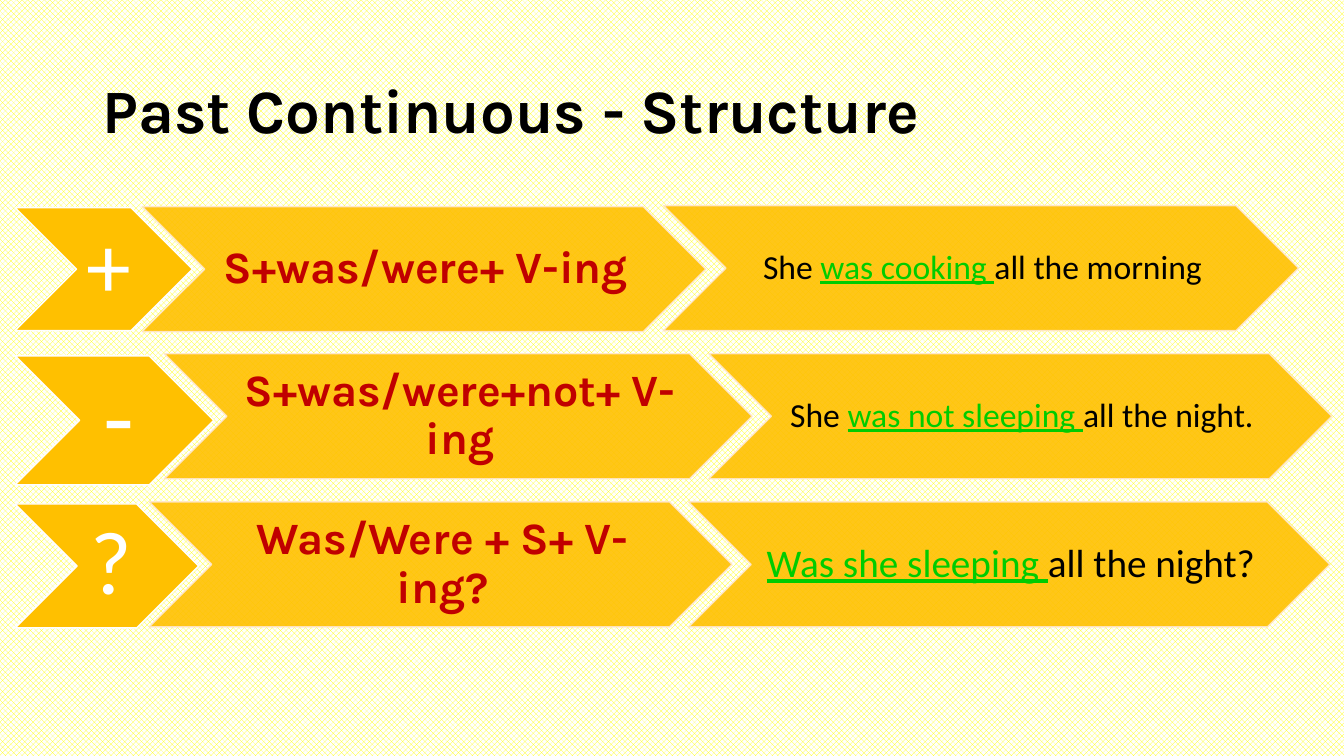
"""Build a slide showing the structure of the past continuous as rows of chevrons."""
from lxml import etree
from pptx import Presentation
from pptx.dml.color import RGBColor
from pptx.enum.dml import MSO_PATTERN
from pptx.enum.shapes import MSO_SHAPE
from pptx.enum.text import MSO_ANCHOR, PP_ALIGN
from pptx.oxml.ns import qn
from pptx.util import Inches, Pt

YELLOW = RGBColor(0xFF, 0xFF, 0x00)
WHITE = RGBColor(0xFF, 0xFF, 0xFF)
BLACK = RGBColor(0x00, 0x00, 0x00)
AMBER = RGBColor(0xFF, 0xC0, 0x00)
CREAM = RGBColor(0xFF, 0xE8, 0xCC)
RED = RGBColor(0xC0, 0x00, 0x00)
GREEN = RGBColor(0x00, 0xCC, 0x00)


def add_run(p, text, size, font, color, bold=False, underline=False):
    r = p.add_run()
    r.text = text
    r.font.size = Pt(size)
    r.font.name = font
    r.font.color.rgb = color
    r.font.bold = bold
    r.font.underline = underline


def add_chevron(box, line_color, inset, opacity=100):
    sp = s.shapes.add_shape(MSO_SHAPE.CHEVRON, *[Inches(v) for v in box])
    sp.shadow.inherit = False
    sp.fill.solid()
    sp.fill.fore_color.rgb = AMBER
    sp.line.color.rgb = line_color
    sp.line.width = Pt(1)
    if opacity < 100:
        for color in sp.element.spPr.iter(qn("a:srgbClr")):
            etree.SubElement(color, qn("a:alpha"), val=str(opacity * 1000))
    tf = sp.text_frame
    tf.word_wrap = True
    tf.vertical_anchor = MSO_ANCHOR.MIDDLE
    tf.margin_left = Inches(inset)
    tf.margin_right = 0
    tf.margin_top = tf.margin_bottom = Inches(inset / 2)
    p = tf.paragraphs[0]
    p.alignment = PP_ALIGN.CENTER
    p.line_spacing = 0.9
    return p


prs = Presentation()
prs.slide_width = Inches(13.33)
prs.slide_height = Inches(7.5)
s = prs.slides.add_slide(prs.slide_layouts[6])

bg = s.background.fill
bg.patterned()
bg.pattern = MSO_PATTERN.LARGE_CHECKER_BOARD
bg.fore_color.rgb = YELLOW
bg.back_color.rgb = WHITE

title = s.shapes.add_textbox(Inches(0.92), Inches(0.4), Inches(11.5), Inches(1.45))
tf = title.text_frame
tf.word_wrap = True
tf.vertical_anchor = MSO_ANCHOR.MIDDLE
p = tf.paragraphs[0]
p.line_spacing = 0.9
add_run(p, "Past Continuous - Structure", 44, "Karla", BLACK, bold=True)

rows = [
    (("+", 64, (0.15, 2.06, 1.76, 1.22)),
     ("S+was/were+ V-ing", (1.41, 2.05, 5.59, 1.24)),
     (("She ", "was cooking ", "all the morning"), 24, (6.58, 2.04, 6.3, 1.24))),
    (("-", 72, (0.15, 3.53, 1.97, 1.28)),
     ("S+was/were+not+ V-ing", (1.63, 3.51, 5.83, 1.24)),
     (("She ", "was not sleeping ", "all the night."), 24, (7.03, 3.51, 6.18, 1.24))),
    (("?", 64, (0.15, 5, 1.82, 1.23)),
     ("Was/Were + S+ V-ing?", (1.48, 4.98, 5.78, 1.24)),
     (("", "Was she sleeping ", "all the night?"), 28, (6.83, 4.98, 6.36, 1.24))),
]

for (sign, sign_size, sign_box), (formula, formula_box), (example, size, example_box) in rows:
    p = add_chevron(sign_box, WHITE, 0.09)
    add_run(p, sign, sign_size, "Calibri", WHITE)

    p = add_chevron(formula_box, CREAM, 0.04, opacity=90)
    add_run(p, formula, 32, "Karla", RED, bold=True)

    p = add_chevron(example_box, CREAM, 0.03, opacity=90)
    subject, verb, rest = example
    if subject:
        add_run(p, subject, size, "Calibri", BLACK)
    add_run(p, verb, size, "Calibri", GREEN, underline=True)
    add_run(p, rest, size, "Calibri", BLACK)

prs.save("out.pptx")
